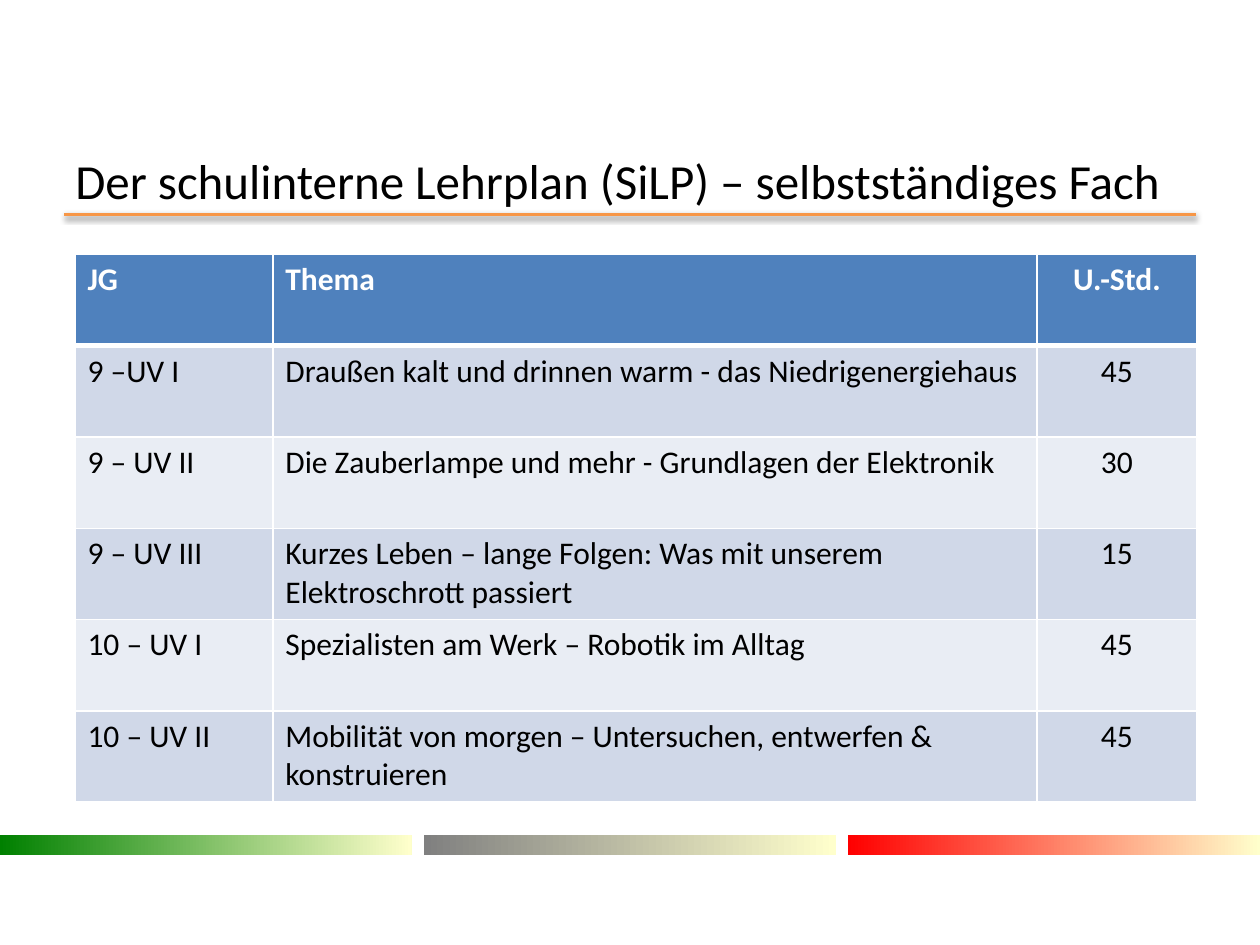
from dataclasses import dataclass

from lxml import etree
from pptx import Presentation
from pptx import util as u
from pptx.dml.color import RGBColor
from pptx.enum import shapes, text
from pptx.oxml import parse_xml
from pptx.oxml.ns import nsdecls, qn

# Content
TITLE = "Der schulinterne Lehrplan (SiLP) – selbstständiges Fach"
HEADER = ("JG", "Thema", "U.-Std.")
UNITS = [
    ("9 –UV I", "Draußen kalt und drinnen warm - das Niedrigenergiehaus", "45"),
    ("9 – UV II", "Die Zauberlampe und mehr - Grundlagen der Elektronik", "30"),
    ("9 – UV III", "Kurzes Leben – lange Folgen: Was mit unserem Elektroschrott passiert", "15"),
    ("10 – UV I", "Spezialisten am Werk – Robotik im Alltag", "45"),
    ("10 – UV II", "Mobilität von morgen – Untersuchen, entwerfen & konstruieren", "45"),
]


@dataclass(frozen=True)
class Theme:
    font: str = "Calibri"
    title_size: int = 28
    table_size: int = 18
    ink: str = "000000"
    white: str = "FFFFFF"
    rule: str = "F79646"
    header: str = "4F81BD"
    bands: tuple = ("D0D8E8", "E9EDF4")
    bars: tuple = ("008000", "808080", "FF0000")
    bar_end: str = "FFFFCC"


THEME = Theme()

# Layout in centimetres
SLIDE_W, SLIDE_H = 25.4, 19.05
TABLE_LEFT, TABLE_TOP, ROW_H = 1.51, 5.13, 1.84
COLUMNS = (3.99, 15.4, 3.23)
BAR_TOP, BAR_W, BAR_H = 16.83, 8.3, 0.41


def rgb(value):
    return RGBColor.from_string(value)


def style(para, size, color, bold=False):
    font = para.font
    font.name, font.size, font.bold = THEME.font, u.Pt(size), bold
    font.color.rgb = rgb(color)


def add_rule(page):
    line = page.shapes.add_connector(
        shapes.MSO_CONNECTOR.STRAIGHT, u.Cm(1.3), u.Cm(4.32), u.Cm(24.1), u.Cm(4.32))
    line.line.color.rgb = rgb(THEME.rule)
    line.line.width = u.Pt(2)
    line._element.spPr.append(parse_xml(
        f'<a:effectLst {nsdecls("a")}><a:outerShdw blurRad="{u.Pt(3.1)}" dist="{u.Pt(1.6)}"'
        f' dir="5400000" rotWithShape="0"><a:srgbClr val="{THEME.ink}">'
        '<a:alpha val="38000"/></a:srgbClr></a:outerShdw></a:effectLst>'))


def add_bars(page):
    step = (SLIDE_W - BAR_W) / (len(THEME.bars) - 1)
    for index, color in enumerate(THEME.bars):
        bar = page.shapes.add_shape(
            shapes.MSO_SHAPE.RECTANGLE, u.Cm(index * step), u.Cm(BAR_TOP), u.Cm(BAR_W), u.Cm(BAR_H))
        bar.shadow.inherit = False
        bar.line.fill.background()
        bar.fill.gradient()
        bar.fill.gradient_angle = 0
        for stop, shade in zip(bar.fill.gradient_stops, (color, THEME.bar_end)):
            stop.color.rgb = rgb(shade)


def set_borders(cell, top, bottom):
    props = cell._tc.get_or_add_tcPr()
    edges = (("a:lnL", 1), ("a:lnR", 1), ("a:lnT", top), ("a:lnB", bottom))
    for place, (tag, width) in enumerate(edges):
        edge = etree.Element(qn(tag), w=str(u.Pt(width)))
        fill = etree.SubElement(edge, qn("a:solidFill"))
        etree.SubElement(fill, qn("a:srgbClr"), val=THEME.white)
        props.insert(place, edge)


def add_units(page):
    rows = [HEADER, *UNITS]
    table = page.shapes.add_table(
        len(rows), len(COLUMNS), u.Cm(TABLE_LEFT), u.Cm(TABLE_TOP),
        u.Cm(sum(COLUMNS)), u.Cm(ROW_H * len(rows))).table
    for column, width in zip(table.columns, COLUMNS):
        column.width = u.Cm(width)
    for r, row in enumerate(rows):
        table.rows[r].height = u.Cm(ROW_H)
        is_header = r == 0
        for c, words in enumerate(row):
            cell = table.cell(r, c)
            cell.text = words
            cell.fill.solid()
            cell.fill.fore_color.rgb = rgb(THEME.header if is_header else THEME.bands[(r - 1) % 2])
            set_borders(cell, top=3 if r == 1 else 1, bottom=3 if is_header else 1)
            para = cell.text_frame.paragraphs[0]
            style(para, THEME.table_size, THEME.white if is_header else THEME.ink, is_header)
            if c == len(COLUMNS) - 1:
                para.alignment = text.PP_ALIGN.CENTER


def add_title(page):
    box = page.shapes.add_textbox(u.Cm(1.27), u.Cm(3.12), u.Cm(22.86), u.Cm(1))
    frame = box.text_frame
    frame.word_wrap = True
    frame.vertical_anchor = text.MSO_ANCHOR.MIDDLE
    frame.text = TITLE
    style(frame.paragraphs[0], THEME.title_size, THEME.ink)


def main():
    deck = Presentation()
    deck.slide_width, deck.slide_height = u.Cm(SLIDE_W), u.Cm(SLIDE_H)
    page = deck.slides.add_slide(deck.slide_layouts[6])
    add_rule(page)
    add_bars(page)
    add_units(page)
    add_title(page)
    deck.save("out.pptx")


if __name__ == "__main__":
    main()
